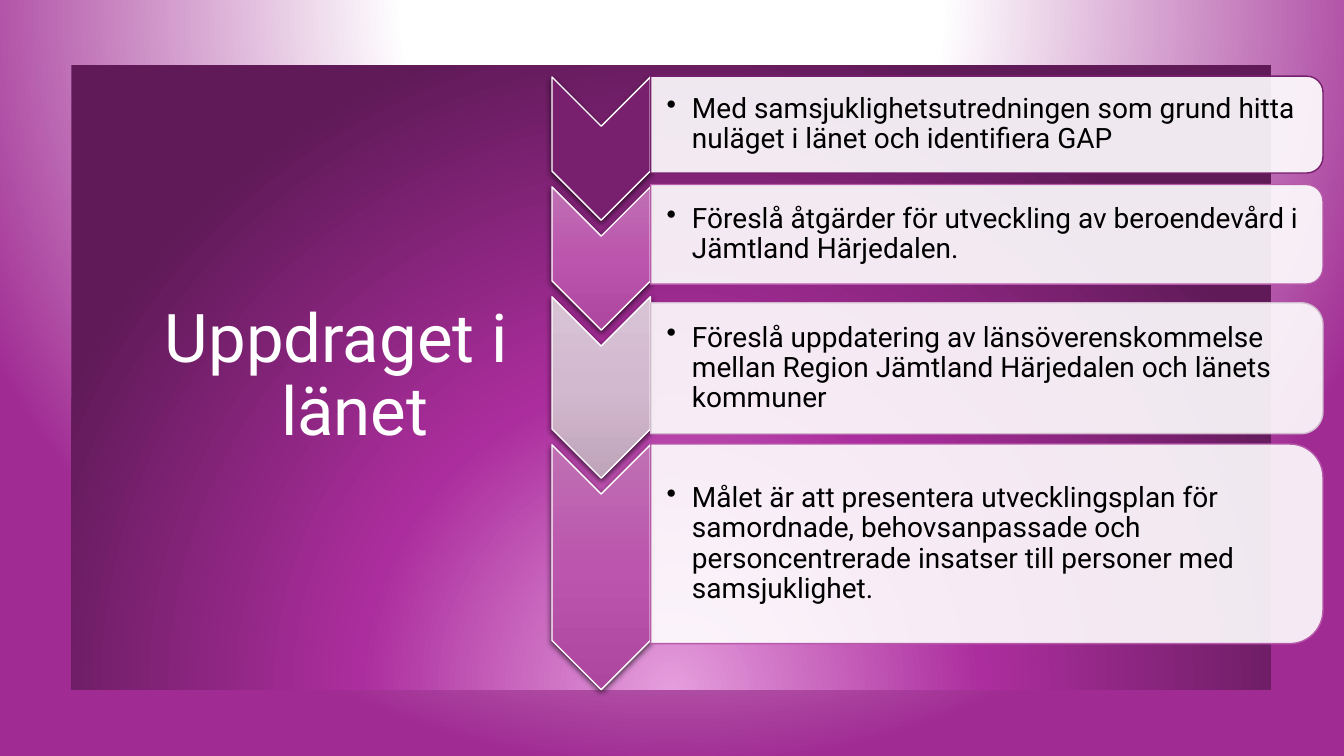
from lxml import etree
from pptx import Presentation
from pptx.dml.color import RGBColor
from pptx.enum.shapes import MSO_SHAPE as SHAPE
from pptx.enum.text import MSO_ANCHOR as ANCHOR, MSO_AUTO_SIZE as AUTO_SIZE, PP_ALIGN as ALIGN
from pptx.oxml import parse_xml
from pptx.oxml.ns import nsdecls, qn
from pptx.util import Cm, Pt

WHITE = RGBColor(0xFF, 0xFF, 0xFF)
BLACK = RGBColor(0x00, 0x00, 0x00)
PLUM = RGBColor(0x78, 0x20, 0x6E)
PLUM_LINE = RGBColor(0x76, 0x20, 0x6D)
ORCHID_LINE = RGBColor(0xB7, 0x5A, 0xAA)
MAUVE_LINE = RGBColor(0xD2, 0xBA, 0xCE)
BACKDROP = [(0, WHITE), (35, WHITE), (100, RGBColor(0xA0, 0x2B, 0x93))]
PANEL = [(0, RGBColor(0xE5, 0x9E, 0xDD)), (46, RGBColor(0xAC, 0x2E, 0x9E)),
         (100, RGBColor(0x60, 0x1A, 0x58))]
ORCHID = [(0, RGBColor(0xBF, 0x70, 0xB3)), (50, RGBColor(0xBC, 0x55, 0xAE)),
          (100, RGBColor(0xAC, 0x46, 0x9E))]
MAUVE = [(0, RGBColor(0xD8, 0xC3, 0xD5)), (50, RGBColor(0xD3, 0xB9, 0xCF)),
         (100, RGBColor(0xBE, 0xA3, 0xB9))]
FONT = "Roboto"
CIRCLE = '<a:path path="circle"><a:fillToRect l="50000" t="{}" r="50000" b="{}"/></a:path>'
DOWNWARD = '<a:lin ang="5400000" scaled="0"/>'


def set_gradient(owner, stops, shade):
    owner.fill.gradient()
    old = owner._element.xpath(".//a:gradFill")[0]
    gs = "".join(f'<a:gs pos="{pos * 1000}"><a:srgbClr val="{color}"/></a:gs>'
                 for pos, color in stops)
    old.getparent().replace(old, parse_xml(
        f'<a:gradFill {nsdecls("a")} rotWithShape="0"><a:gsLst>{gs}</a:gsLst>{shade}</a:gradFill>'))


def add_upright(kind, left, top, width, height, line):
    sp = s.shapes.add_shape(kind, Cm(left + (width - height) / 2),
                            Cm(top + (height - width) / 2), Cm(height), Cm(width))
    sp.rotation = 90
    sp.shadow.inherit = False
    sp.line.color.rgb = line
    sp.line.width = Pt(1)
    return sp


prs = Presentation()
prs.slide_width, prs.slide_height = Cm(33.87), Cm(19.05)
s = prs.slides.add_slide(prs.slide_layouts[5])
set_gradient(s.background, BACKDROP, CIRCLE.format(-80000, 180000))

title = s.shapes.title
title.left, title.top, title.width, title.height = Cm(1.8), Cm(1.65), Cm(30.23), Cm(15.72)
set_gradient(title, PANEL, CIRCLE.format(130000, -30000))
tf = title.text_frame
tf.auto_size = AUTO_SIZE.NONE
tf.vertical_anchor = ANCHOR.MIDDLE
p = tf.paragraphs[0]
p.text = "Uppdraget i\vlänet"
p.alignment = ALIGN.LEFT
p.line_spacing = 0.9
p.font.name, p.font.size, p.font.color.rgb = FONT, Pt(48), WHITE
pPr = p._p.get_or_add_pPr()
pPr.set("marL", str(Cm(5.03)))
pPr.set("indent", str(Cm(-2.93)))

CHEVRON_LEFT, CHEVRON_WIDTH, OVERLAP = 13.91, 2.48, 0.84
CARD_LEFT, CARD_WIDTH = 16.4, 16.94
steps = [
    (3.61, 1.92, 2.44, None, PLUM_LINE,
     "Med samsjuklighetsutredningen som grund hitta nuläget i länet och identifiera GAP"),
    (3.61, 4.65, 2.51, ORCHID, ORCHID_LINE,
     "Föreslå åtgärder för utveckling av beroendevård i Jämtland Härjedalen."),
    (4.57, 7.63, 3.3, MAUVE, MAUVE_LINE,
     "Föreslå uppdatering av länsöverenskommelse mellan Region Jämtland Härjedalen "
     "och länets kommuner"),
    (6.17, 11.19, 5.03, ORCHID, ORCHID_LINE,
     "Målet är att presentera utvecklingsplan för samordnade, behovsanpassade och "
     "personcentrerade insatser till personer med samsjuklighet."),
]

chevron_top = 1.94
for chevron_height, card_top, card_height, stops, line, text in steps:
    chevron = add_upright(SHAPE.CHEVRON, CHEVRON_LEFT, chevron_top,
                          CHEVRON_WIDTH, chevron_height, WHITE)
    if stops:
        set_gradient(chevron, stops, DOWNWARD)
    else:
        chevron.fill.solid()
        chevron.fill.fore_color.rgb = PLUM
    effects = chevron._element.spPr.find(qn("a:effectLst"))
    effects.append(parse_xml(
        f'<a:outerShdw {nsdecls("a")} blurRad="{Pt(4.5)}" dist="{Pt(1.5)}" dir="5400000" '
        'algn="ctr" rotWithShape="0"><a:srgbClr val="000000"><a:alpha val="63000"/>'
        '</a:srgbClr></a:outerShdw>'))
    chevron_top += chevron_height - OVERLAP

    card = add_upright(SHAPE.ROUND_2_SAME_RECTANGLE, CARD_LEFT, card_top,
                       CARD_WIDTH, card_height, line)
    card.fill.solid()
    card.fill.fore_color.rgb = WHITE
    color = card._element.spPr.find(qn("a:solidFill")).find(qn("a:srgbClr"))
    etree.SubElement(color, qn("a:alpha"), val="90000")

    box = s.shapes.add_textbox(Cm(CARD_LEFT), Cm(card_top + 0.05 * card_height),
                               Cm(16.8), Cm(0.9 * card_height))
    tf = box.text_frame
    tf.word_wrap = True
    tf.vertical_anchor = ANCHOR.MIDDLE
    tf.margin_left = Cm(0.4)
    tf.margin_top = tf.margin_right = tf.margin_bottom = Cm(0.03)
    p = tf.paragraphs[0]
    p.text = text
    p.level = 1
    p.line_spacing = 0.9
    p.space_after = Pt(3)
    p.font.name, p.font.size, p.font.color.rgb = FONT, Pt(20), BLACK
    pPr = p._p.get_or_add_pPr()
    pPr.set("marL", str(Cm(0.64)))
    pPr.set("indent", str(Cm(-0.64)))
    bullet = parse_xml(f'<a:buChar {nsdecls("a")} char="•"/>')
    pPr.find(qn("a:defRPr")).addprevious(bullet)

prs.save("out.pptx")
